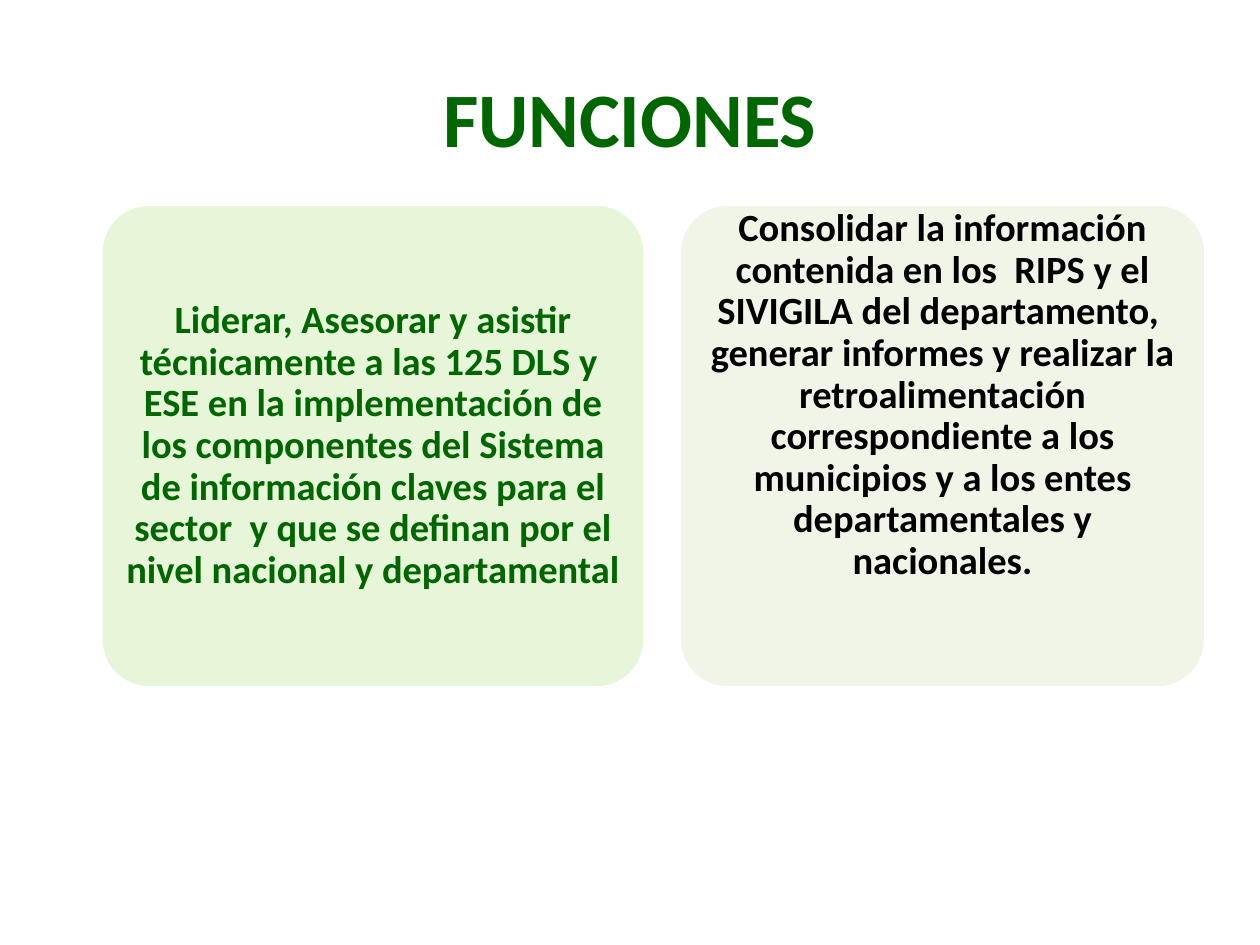
from lxml.etree import SubElement
from pptx import Presentation
from pptx.dml.color import RGBColor
from pptx.enum.shapes import MSO_SHAPE as Shape
from pptx.enum.text import MSO_ANCHOR as Anchor, PP_ALIGN as Align
from pptx.oxml.ns import qn
from pptx.util import Inches, Pt

DARK_GREEN = RGBColor(0x00, 0x66, 0x00)
LIME = RGBColor(0x92, 0xD0, 0x50)
SAGE = RGBColor(0xD7, 0xE4, 0xBD)
BLACK = RGBColor(0x00, 0x00, 0x00)
WHITE = RGBColor(0xFF, 0xFF, 0xFF)

CARD_TOP = 1.62
CARD_HEIGHT = 3.84
LEAD_TEXT = (
    "Liderar, Asesorar y asistir técnicamente a las 125 DLS y  ESE en la "
    "implementación de los componentes del Sistema de información claves para "
    "el sector  y que se definan por el nivel nacional y departamental"
)
REPORT_TEXT = (
    "Consolidar la información contenida en los  RIPS y el SIVIGILA del "
    "departamento,  generar informes y realizar la retroalimentación "
    "correspondiente a los municipios y a los entes departamentales y nacionales."
)


def write(frame, text, size, color):
    frame.text = text
    frame.word_wrap = True
    frame.vertical_anchor = Anchor.MIDDLE
    para = frame.paragraphs[0]
    para.alignment = Align.CENTER
    font = para.runs[0].font
    font.name = "Calibri"
    font.size = Pt(size)
    font.bold = True
    font.color.rgb = color
    return para


def add_title(page, text):
    title = page.shapes.title
    title.left, title.top = Inches(0.5), Inches(0.3)
    title.width, title.height = Inches(9), Inches(1.25)
    write(title.text_frame, text, 44, DARK_GREEN)


def add_card(page, left, width, fill, opacity):
    card = page.shapes.add_shape(
        Shape.ROUNDED_RECTANGLE,
        Inches(left), Inches(CARD_TOP), Inches(width), Inches(CARD_HEIGHT),
    )
    card.adjustments[0] = 0.1
    card.shadow.inherit = False
    card.fill.solid()
    card.fill.fore_color.rgb = fill
    color = card.fill._xPr.find(qn("a:solidFill")).find(qn("a:srgbClr"))
    SubElement(color, qn("a:alpha"), val=str(opacity * 1000))
    card.line.color.rgb = WHITE
    card.line.width = Pt(2)


def add_card_text(page, left, width, height, text, color):
    box = page.shapes.add_textbox(
        Inches(left), Inches(CARD_TOP), Inches(width), Inches(height)
    )
    frame = box.text_frame
    frame.margin_left = frame.margin_right = Inches(0.17)
    frame.margin_top = frame.margin_bottom = 0
    write(frame, text, 22, color).line_spacing = 0.9


def main():
    deck = Presentation()
    deck.slide_width, deck.slide_height = Inches(10), Inches(7.5)
    page = deck.slides.add_slide(deck.slide_layouts[5])
    add_title(page, "FUNCIONES")
    add_card(page, 0.8, 4.32, LIME, 21)
    add_card_text(page, 0.8, 4.32, CARD_HEIGHT, LEAD_TEXT, DARK_GREEN)
    add_card(page, 5.39, 4.18, SAGE, 35)
    add_card_text(page, 5.39, 4.18, 3.04, REPORT_TEXT, BLACK)
    deck.save("out.pptx")


if __name__ == "__main__":
    main()
